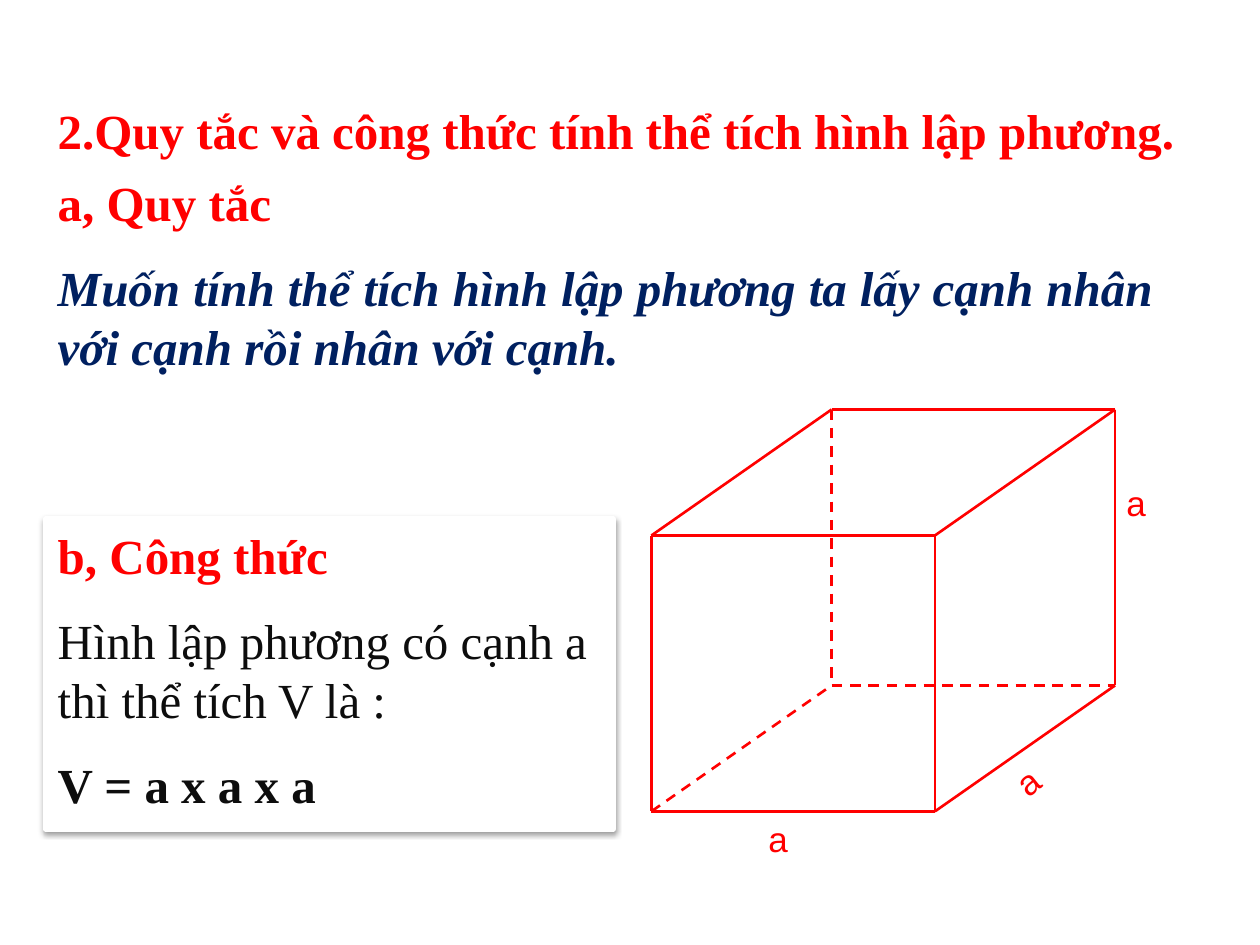
from lxml import etree
from pptx import Presentation
from pptx.dml.color import RGBColor
from pptx.enum.dml import MSO_LINE
from pptx.enum.shapes import MSO_CONNECTOR, MSO_SHAPE
from pptx.enum.text import MSO_ANCHOR, MSO_AUTO_SIZE, PP_ALIGN
from pptx.oxml import parse_xml
from pptx.oxml.ns import nsdecls, qn
from pptx.util import Inches, Pt

DASH = MSO_LINE.DASH
STRAIGHT = MSO_CONNECTOR.STRAIGHT
RECTANGLE = MSO_SHAPE.RECTANGLE
TOP = MSO_ANCHOR.TOP
GROW = MSO_AUTO_SIZE.SHAPE_TO_FIT_TEXT
LEFT, JUSTIFY = PP_ALIGN.LEFT, PP_ALIGN.JUSTIFY

RED, NAVY, INK, WHITE = "FF0000", "002060", "0D0D0D", "FFFFFF"
SERIF, SANS = "Times New Roman", "Arial"

CUBE_LEFT, CUBE_TOP = 5.17, 4.25
CUBE_WIDTH, CUBE_HEIGHT = 2.25, 2.19
DEPTH_X, DEPTH_Y = 1.43, -1.0


def color(hex_string):
    """Return the colour for a hex string."""
    return RGBColor.from_string(hex_string)


def fill_text(shape, paragraphs, align=LEFT, size=28, font=SERIF):
    """Write (text, colour, bold, italic) paragraphs into a shape."""
    tf = shape.text_frame
    tf.word_wrap = True
    tf.auto_size = GROW
    tf.vertical_anchor = TOP
    tf.text = "\n".join(text for text, *_ in paragraphs)
    for i, (p, (_, hex_string, bold, italic)) in enumerate(zip(tf.paragraphs, paragraphs)):
        p.alignment = align
        p.space_before = Pt(15 if i else 0)
        f = p.runs[0].font
        f.name, f.size, f.bold, f.italic = font, Pt(size), bold, italic
        f.color.rgb = color(hex_string)


def add_text(shapes, box, paragraphs, **style):
    """Add a text box at (left, top, width, height)."""
    s = shapes.add_textbox(*map(Inches, box))
    fill_text(s, paragraphs, **style)
    return s


def add_edge(shapes, start, end, hidden):
    """Add one cube edge, dashed when hidden."""
    s = shapes.add_connector(STRAIGHT, *map(Inches, (*start, *end)))
    s.line.color.rgb = color(RED)
    s.line.width = Pt(1.5)
    if hidden:
        s.line.dash_style = DASH
    etree.SubElement(s._element.spPr, qn("a:effectLst"))


def cube_corner(x, y, z):
    """Return the position of a cube corner, each index being 0 or 1."""
    return (CUBE_LEFT + x * CUBE_WIDTH + z * DEPTH_X,
            CUBE_TOP + y * CUBE_HEIGHT + z * DEPTH_Y)


def add_cube(slide):
    """Add the cube with its edge labels as one group."""
    shapes = slide.shapes.add_group_shape().shapes
    corners = [(x, y, z) for x in (0, 1) for y in (0, 1) for z in (0, 1)]
    hidden_corner = (0, 1, 1)
    for i, a in enumerate(corners):
        for b in corners[i + 1:]:
            if sum(m != n for m, n in zip(a, b)) == 1:
                add_edge(shapes, cube_corner(*a), cube_corner(*b), hidden_corner in (a, b))
    for left, top, angle in ((7.92, 5.78, 321.4), (8.84, 3.77, 0), (6, 6.44, 0)):
        label = add_text(shapes, (left, top, 0.99, 0.47), [("a", RED, False, False)],
                         size=20, font=SANS)
        label.rotation = angle


def add_card(slide, box, paragraphs):
    """Add a white rectangle with a soft shadow below it."""
    s = slide.shapes.add_shape(RECTANGLE, *map(Inches, box))
    s.fill.solid()
    s.fill.fore_color.rgb = color(WHITE)
    s.line.color.rgb = color(WHITE)
    s.line.width = Pt(3)
    s._element.spPr.append(parse_xml(
        f'<a:effectLst {nsdecls("a")}><a:outerShdw blurRad="{Pt(3.1)}" dist="{Pt(1.6)}" '
        'dir="5400000" rotWithShape="0"><a:srgbClr val="000000"><a:alpha val="38000"/>'
        '</a:srgbClr></a:outerShdw></a:effectLst>'))
    fill_text(s, paragraphs)


def main():
    """Build and save the slide."""
    prs = Presentation()
    prs.slide_width, prs.slide_height = Inches(10), Inches(7.5)
    slide = prs.slides.add_slide(prs.slide_layouts[6])
    add_cube(slide)
    add_card(slide, (0.36, 4.12, 4.51, 2.46), [
        ("b, Công thức", RED, True, False),
        ("Hình lập phương có cạnh a thì thể tích V là :", INK, False, False),
        ("V = a x a x a", INK, True, False)])
    add_text(slide.shapes, (0.36, 0.75, 9.31, 0.57), [
        ("2.Quy tắc và công thức tính thể tích hình lập phương.", RED, True, False)],
        align=JUSTIFY)
    add_text(slide.shapes, (0.36, 1.32, 8.89, 1.75), [
        ("a, Quy tắc", RED, True, False),
        ("Muốn tính thể tích hình lập phương ta lấy cạnh nhân với cạnh rồi nhân với cạnh.",
         NAVY, True, True)], align=JUSTIFY)
    prs.save("out.pptx")


if __name__ == "__main__":
    main()
